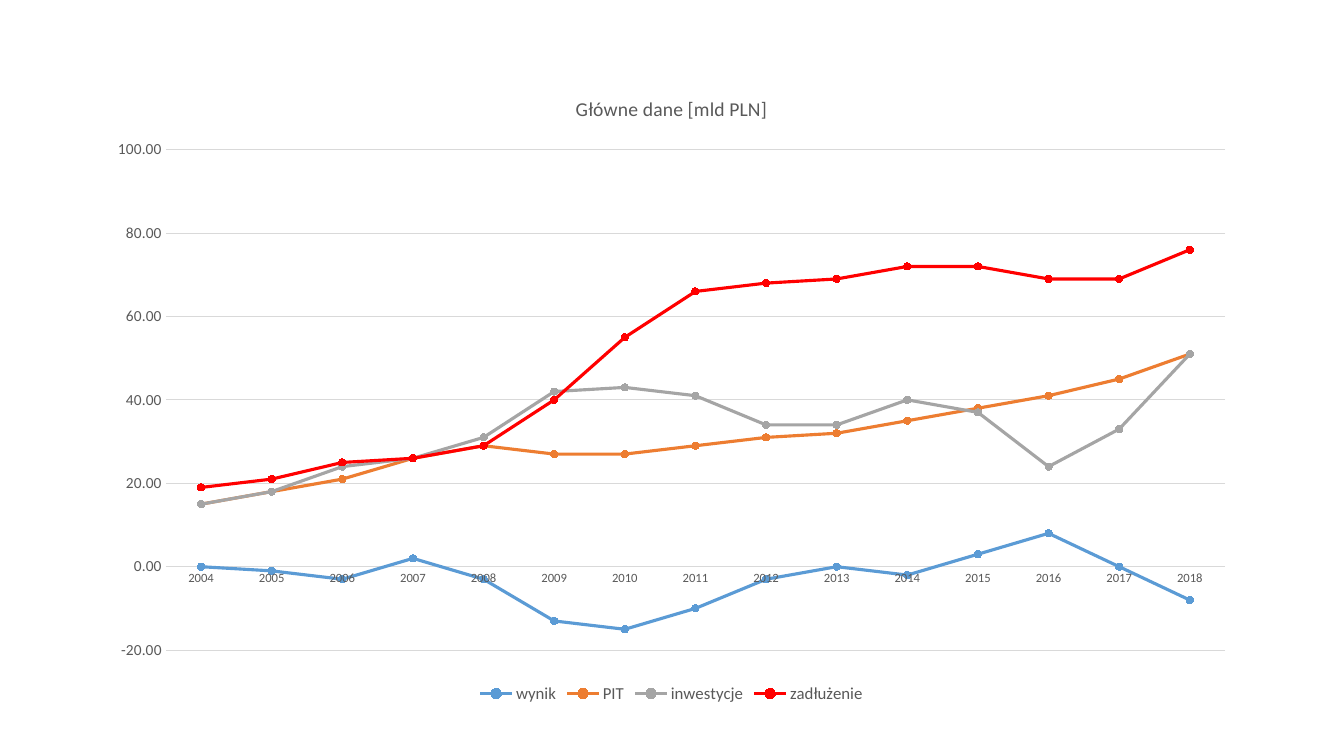
from pptx import Presentation
from pptx.chart.data import CategoryChartData
from pptx.dml.color import RGBColor
from pptx.enum import chart as chart_enum
from pptx.util import Inches, Pt

FONT = "Calibri"
COLORS = {
    "text": "595959",
    "grid": "D9D9D9",
    "wynik": "5B9BD5",
    "PIT": "ED7D31",
    "inwestycje": "A5A5A5",
    "zadłużenie": "FF0000",
}
YEARS = [str(year) for year in range(2004, 2019)]
SERIES = {
    "wynik": (0, -1, -3, 2, -3, -13, -15, -10, -3, 0, -2, 3, 8, 0, -8),
    "PIT": (15, 18, 21, 26, 29, 27, 27, 29, 31, 32, 35, 38, 41, 45, 51),
    "inwestycje": (15, 18, 24, 26, 31, 42, 43, 41, 34, 34, 40, 37, 24, 33, 51),
    "zadłużenie": (19, 21, 25, 26, 29, 40, 55, 66, 68, 69, 72, 72, 69, 69, 76),
}


def color(name):
    return RGBColor.from_string(COLORS[name])


def set_font(font, size):
    font.name = FONT
    font.size = Pt(size)
    font.bold = False
    font.color.rgb = color("text")


def set_line(line, name, width):
    line.color.rgb = color(name)
    line.width = Pt(width)


def add_line_chart(slide):
    data = CategoryChartData(number_format="#,##0.00")
    data.categories = YEARS
    for name, values in SERIES.items():
        data.add_series(name, values)
    frame = slide.shapes.add_chart(
        chart_enum.XL_CHART_TYPE.LINE_MARKERS,
        Inches(0.94), Inches(0.73), Inches(11.44), Inches(6.29), data)
    return frame.chart


def format_title(chart):
    chart.has_title = True
    paragraph = chart.chart_title.text_frame.paragraphs[0]
    paragraph.text = "Główne dane [mld PLN]"
    set_font(paragraph.font, 14)
    chart.chart_title.include_in_layout = False


def format_axes(chart):
    years, amounts = chart.category_axis, chart.value_axis
    for axis, size in ((years, 9), (amounts, 11)):
        axis.major_tick_mark = chart_enum.XL_TICK_MARK.NONE
        axis.minor_tick_mark = chart_enum.XL_TICK_MARK.NONE
        set_font(axis.tick_labels.font, size)
    set_line(years.format.line, "grid", 0.75)
    amounts.format.line.fill.background()
    amounts.minimum_scale, amounts.maximum_scale = -20, 100
    amounts.major_unit = 20
    amounts.tick_labels.number_format = "#,##0.00"
    amounts.tick_labels.number_format_is_linked = False
    set_line(amounts.major_gridlines.format.line, "grid", 0.75)


def format_legend(chart):
    chart.has_legend = True
    chart.legend.position = chart_enum.XL_LEGEND_POSITION.BOTTOM
    chart.legend.include_in_layout = False
    set_font(chart.legend.font, 12)


def format_series(chart):
    plot = chart.plots[0]
    plot.vary_by_categories = False
    for series in plot.series:
        series.smooth = False
        set_line(series.format.line, series.name, 2.25)
        marker = series.marker
        marker.style = chart_enum.XL_MARKER_STYLE.CIRCLE
        marker.size = 5
        marker.format.fill.solid()
        marker.format.fill.fore_color.rgb = color(series.name)
        set_line(marker.format.line, series.name, 0.75)


def main():
    presentation = Presentation()
    presentation.slide_width = Inches(13.33)
    presentation.slide_height = Inches(7.5)
    slide = presentation.slides.add_slide(presentation.slide_layouts[6])
    chart = add_line_chart(slide)
    set_font(chart.font, 10)
    format_title(chart)
    format_axes(chart)
    format_legend(chart)
    format_series(chart)
    presentation.save("out.pptx")


if __name__ == "__main__":
    main()
